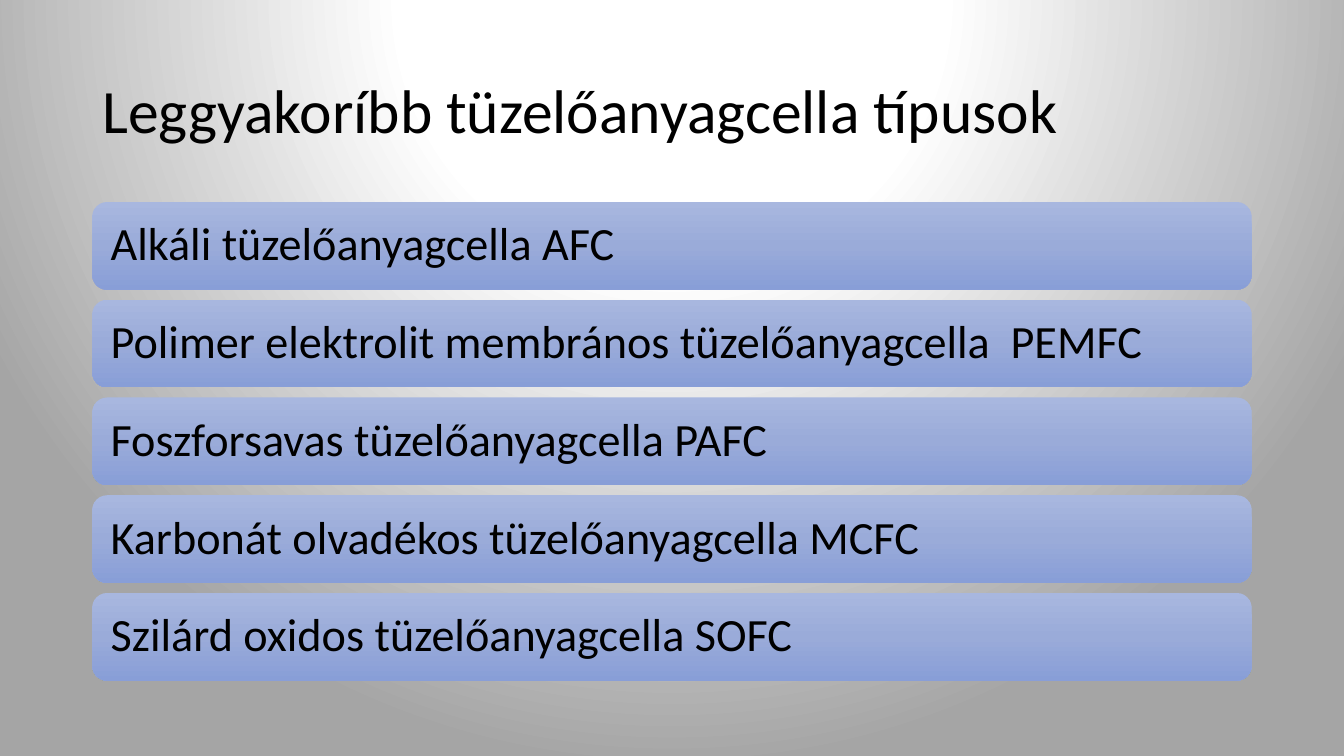
from lxml import etree
from pptx import Presentation
from pptx.dml.color import RGBColor
from pptx.enum.shapes import MSO_SHAPE
from pptx.enum.text import MSO_ANCHOR, PP_ALIGN
from pptx.oxml.ns import qn
from pptx.util import Pt

TITLE = "Leggyakoríbb tüzelőanyagcella típusok"
CELL_TYPES = [
    "Alkáli tüzelőanyagcella AFC",
    "Polimer elektrolit membrános tüzelőanyagcella  PEMFC",
    "Foszforsavas tüzelőanyagcella PAFC",
    "Karbonát olvadékos tüzelőanyagcella MCFC",
    "Szilárd oxidos tüzelőanyagcella SOFC",
]

BLACK = RGBColor(0x00, 0x00, 0x00)
WHITE = RGBColor(0xFF, 0xFF, 0xFF)
GRAY = RGBColor(0xA5, 0xA5, 0xA5)
BLUE_LIGHT = RGBColor(0xA8, 0xB7, 0xDF)
BLUE_MIDDLE = RGBColor(0x9A, 0xAB, 0xD9)
BLUE_DARK = RGBColor(0x88, 0x9E, 0xD7)
BACKGROUND_STOPS = [(0, WHITE), (35, WHITE), (100, GRAY)]
BAR_STOPS = [(0, BLUE_LIGHT), (50, BLUE_MIDDLE), (100, BLUE_DARK)]

LEFT, WIDTH = 66, 828
TITLE_TOP, TITLE_HEIGHT = 28.75, 104.4
BARS_TOP, BAR_HEIGHT, BAR_PITCH = 144.3, 62.6, 69.82
BAR_INSET = 10


def set_gradient(fill, owner, stops, radial=False):
    """Fill owner with the stops, from top to bottom or in circles around a point above it."""
    fill.gradient()
    gradient = next(owner.iter(qn("a:gradFill")))
    for child in list(gradient):
        gradient.remove(child)
    stop_list = etree.SubElement(gradient, qn("a:gsLst"))
    for percent, color in stops:
        stop = etree.SubElement(stop_list, qn("a:gs"), pos=str(percent * 1000))
        etree.SubElement(stop, qn("a:srgbClr"), val=str(color))
    if radial:
        circle = etree.SubElement(gradient, qn("a:path"), path="circle")
        etree.SubElement(circle, qn("a:fillToRect"),
                         l="50000", t="-80000", r="50000", b="180000")
    else:
        etree.SubElement(gradient, qn("a:lin"), ang="5400000", scaled="0")


def write_text(shape, text, size):
    frame = shape.text_frame
    frame.text = text
    frame.word_wrap = True
    frame.vertical_anchor = MSO_ANCHOR.MIDDLE
    paragraph = frame.paragraphs[0]
    paragraph.alignment = PP_ALIGN.LEFT
    paragraph.line_spacing = 0.9
    paragraph.font.name = "Calibri"
    paragraph.font.size = Pt(size)
    paragraph.font.color.rgb = BLACK


def add_bar(slide, index, text):
    bar = slide.shapes.add_shape(
        MSO_SHAPE.ROUNDED_RECTANGLE, Pt(LEFT), Pt(BARS_TOP + index * BAR_PITCH),
        Pt(WIDTH), Pt(BAR_HEIGHT))
    bar.shadow.inherit = False
    bar.line.fill.background()
    set_gradient(bar.fill, bar._element, BAR_STOPS)
    write_text(bar, text, 33)
    bar.text_frame.margin_left = bar.text_frame.margin_right = Pt(BAR_INSET)


def main():
    presentation = Presentation()
    presentation.slide_width, presentation.slide_height = Pt(960), Pt(540)
    slide = presentation.slides.add_slide(presentation.slide_layouts[5])
    set_gradient(slide.background.fill, slide._element, BACKGROUND_STOPS, radial=True)

    title = slide.shapes.title
    title.left, title.top = Pt(LEFT), Pt(TITLE_TOP)
    title.width, title.height = Pt(WIDTH), Pt(TITLE_HEIGHT)
    write_text(title, TITLE, 44)

    for index, text in enumerate(CELL_TYPES):
        add_bar(slide, index, text)
    presentation.save("out.pptx")


if __name__ == "__main__":
    main()
